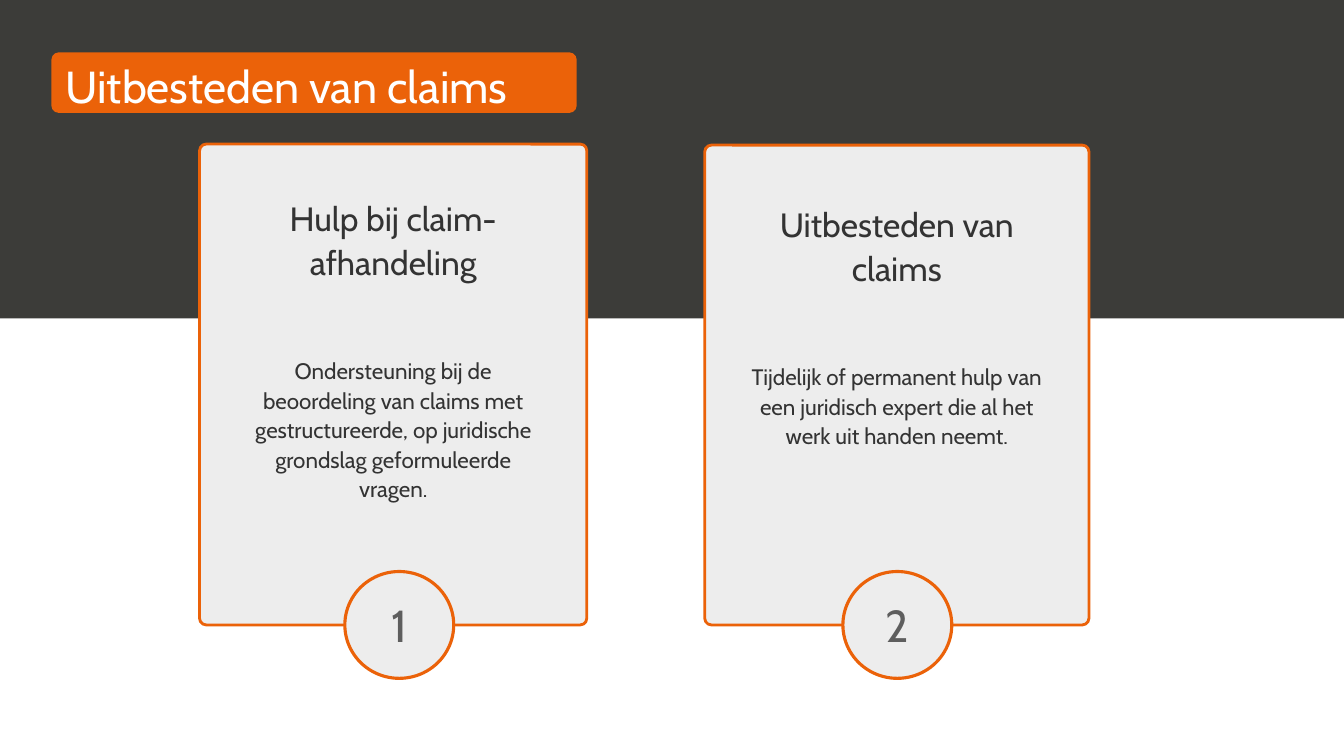
from dataclasses import dataclass

from pptx import Presentation
from pptx import util as u
from pptx.dml.color import RGBColor
from pptx.enum import shapes, text

# Content
TITLE = "Uitbesteden van claims"
CARDS = [
    # heading, body, card box, heading top, badge centre
    ("Hulp bij claim-afhandeling",
     "Ondersteuning bij de beoordeling van claims met gestructureerde, "
     "op juridische grondslag geformuleerde vragen.",
     (1.98, 1.43, 3.84, 4.77), 1.86, 3.96),
    ("Uitbesteden van claims",
     "Tijdelijk of permanent hulp van een juridisch expert die al het "
     "werk uit handen neemt.",
     (6.99, 1.44, 3.81, 4.76), 1.92, 8.9),
]


# Theme
@dataclass(frozen=True)
class Theme:
    font: str = "Cabin"
    dark: str = "3C3C39"
    accent: str = "EB6209"
    panel: str = "EDEDED"
    ink: str = "333333"
    number: str = "5E5E5E"
    white: str = "FFFFFF"
    title_size: int = 32
    heading_size: int = 24
    body_size: int = 16


THEME = Theme()
WIDTH, HEIGHT = 13.33, 7.5
BAND_HEIGHT = 3.16
HEADING_WIDTH, HEADING_HEIGHT = 2.83, 1.54
BODY_WIDTH, BODY_HEIGHT = 3.09, 2.13
BODY_DROP = 1.6
BADGE_WIDTH, BADGE_HEIGHT = 1.08, 1.06

prs = Presentation()
prs.slide_width, prs.slide_height = u.Inches(WIDTH), u.Inches(HEIGHT)
slide = prs.slides.add_slide(prs.slide_layouts[6])


def add_panel(kind, box, fill, line_width=0, corner=None):
    panel = slide.shapes.add_shape(kind, *map(u.Inches, box))
    panel.shadow.inherit = False
    panel.fill.solid()
    panel.fill.fore_color.rgb = RGBColor.from_string(fill)
    if line_width:
        panel.line.color.rgb = RGBColor.from_string(THEME.accent)
        panel.line.width = u.Pt(line_width)
    else:
        panel.line.fill.background()
    if corner is not None:
        panel.adjustments[0] = corner
    return panel


def write(holder, words, size, color, align=text.PP_ALIGN.CENTER,
          anchor=text.MSO_ANCHOR.TOP, inset=0.06, spacing=1.1):
    frame = holder.text_frame
    frame.word_wrap = True
    frame.vertical_anchor = anchor
    frame.margin_left = frame.margin_right = u.Inches(inset)
    frame.margin_top = frame.margin_bottom = u.Inches(inset)
    frame.text = words
    paragraph = frame.paragraphs[0]
    paragraph.alignment = align
    paragraph.line_spacing = spacing
    font = paragraph.runs[0].font
    font.name, font.size = THEME.font, u.Pt(size)
    font.color.rgb = RGBColor.from_string(color)


def add_text(box, *args, **options):
    write(slide.shapes.add_textbox(*map(u.Inches, box)), *args, **options)


# Dark band and title
add_panel(shapes.MSO_SHAPE.RECTANGLE, (0, 0, WIDTH, BAND_HEIGHT), THEME.dark)
add_panel(shapes.MSO_SHAPE.ROUNDED_RECTANGLE, (0.51, 0.52, 5.21, 0.6),
          THEME.accent, corner=0.12)
add_text((0.62, 0.52, 7.92, 0.6), TITLE, THEME.title_size, THEME.white,
         align=text.PP_ALIGN.LEFT, anchor=text.MSO_ANCHOR.MIDDLE, inset=0.03)

# Numbered cards
for number, (heading, body, card, top, badge_center) in enumerate(CARDS, 1):
    left, card_top, width, height = card
    center, bottom = left + width / 2, card_top + height
    add_panel(shapes.MSO_SHAPE.ROUNDED_RECTANGLE, card, THEME.panel,
              line_width=2, corner=0.017)
    badge = add_panel(
        shapes.MSO_SHAPE.OVAL,
        (badge_center - BADGE_WIDTH / 2, bottom - BADGE_HEIGHT / 2,
         BADGE_WIDTH, BADGE_HEIGHT),
        THEME.panel, line_width=2.25)
    write(badge, str(number), THEME.title_size, THEME.number,
          anchor=text.MSO_ANCHOR.MIDDLE, spacing=1.0)
    add_text((center - HEADING_WIDTH / 2, top, HEADING_WIDTH, HEADING_HEIGHT),
             heading, THEME.heading_size, THEME.ink)
    add_text((center - BODY_WIDTH / 2, top + BODY_DROP,
              BODY_WIDTH, BODY_HEIGHT),
             body, THEME.body_size, THEME.ink)

prs.save("out.pptx")
